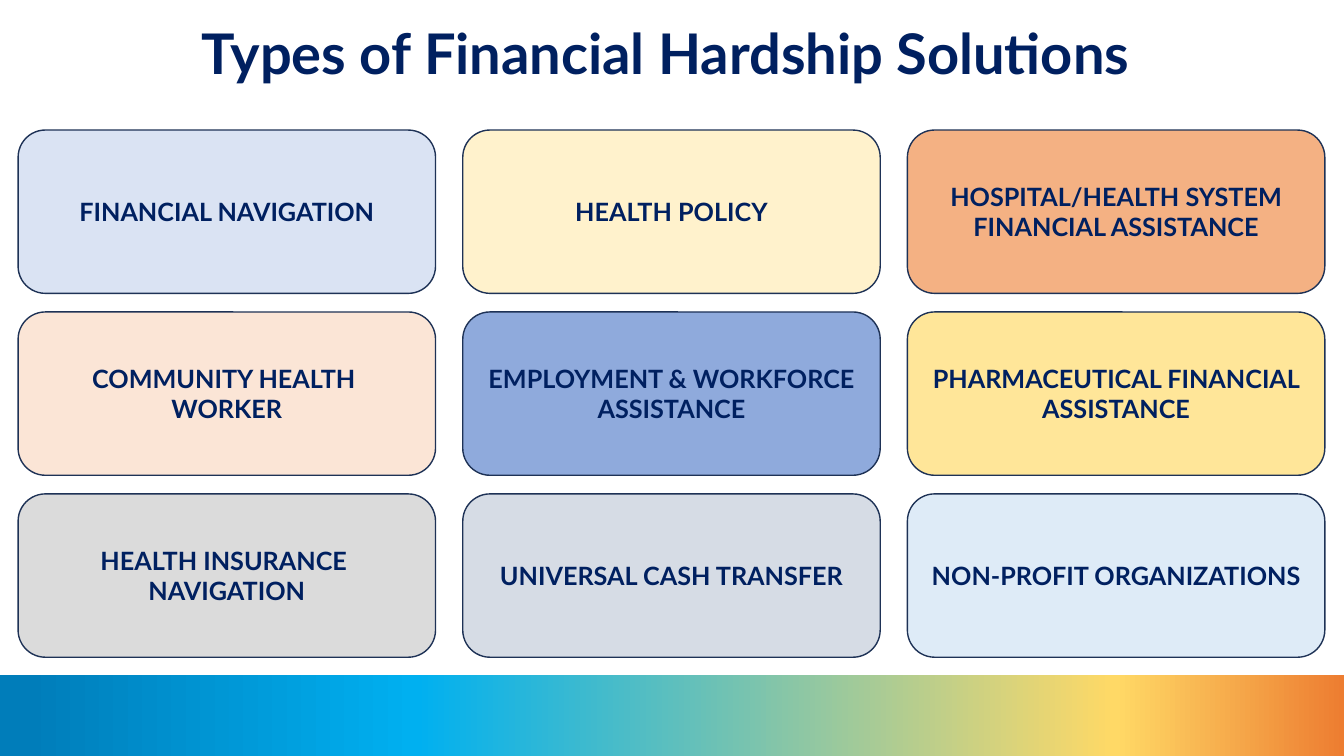
"""Build the slide on types of financial hardship solutions."""
from lxml import etree
from pptx import Presentation
from pptx.dml.color import RGBColor
from pptx.enum.shapes import MSO_SHAPE
from pptx.enum.text import MSO_ANCHOR, PP_ALIGN
from pptx.oxml.ns import qn
from pptx.util import Inches, Pt

RECT = MSO_SHAPE.RECTANGLE
ROUNDED = MSO_SHAPE.ROUNDED_RECTANGLE
MIDDLE = MSO_ANCHOR.MIDDLE
CENTER = PP_ALIGN.CENTER

COLORS = {
    "text": "002060", "outline": "1E3256",
    "pale_blue": "DAE3F3", "cream": "FFF2CC", "orange": "F4B183",
    "peach": "FBE5D6", "blue": "8FAADC", "yellow": "FFE699",
    "gray": "DBDBDB", "slate": "D6DCE5", "ice": "DEEBF7",
    "band_blue": "007DBA", "band_sky": "00B0F0",
    "band_yellow": "FFD966", "band_orange": "ED7D31",
}
BAND_STOPS = [(2, "band_blue"), (31, "band_sky"),
              (83, "band_yellow"), (100, "band_orange")]
SOLUTIONS = [
    [("pale_blue", ["FINANCIAL NAVIGATION"]),
     ("cream", ["HEALTH POLICY"]),
     ("orange", ["HOSPITAL/HEALTH SYSTEM FINANCIAL ASSISTANCE"])],
    [("peach", ["COMMUNITY HEALTH ", "WORKER"]),
     ("blue", ["EMPLOYMENT & WORKFORCE ASSISTANCE"]),
     ("yellow", ["PHARMACEUTICAL FINANCIAL ASSISTANCE"])],
    [("gray", ["HEALTH INSURANCE ", "NAVIGATION"]),
     ("slate", ["UNIVERSAL CASH TRANSFER"]),
     ("ice", ["NON-PROFIT ORGANIZATIONS"])],
]
LEFT, TOP, WIDTH, HEIGHT = 0.18, 1.29, 4.14, 1.62
COL_STEP, ROW_STEP = 4.41, 1.805


def rgb(name):
    return RGBColor.from_string(COLORS[name])


def write(sp, lines, size):
    tf = sp.text_frame
    tf.word_wrap = True
    tf.vertical_anchor = MIDDLE
    for i, line in enumerate(lines):
        p = tf.add_paragraph() if i else tf.paragraphs[0]
        p.alignment = CENTER
        r = p.add_run()
        r.text = line
        r.font.name = "Lato"
        r.font.size = Pt(size)
        r.font.bold = True
        r.font.color.rgb = rgb("text")


prs = Presentation()
prs.slide_width = Inches(13.33)
prs.slide_height = Inches(7.5)
s = prs.slides.add_slide(prs.slide_layouts[6])

band = s.shapes.add_shape(RECT, 0, Inches(6.7), Inches(13.33), Inches(0.8))
band.shadow.inherit = False
band.line.fill.background()
band.fill.gradient()
band.fill.gradient_angle = 0
stops = band.element.spPr.find(".//" + qn("a:gsLst"))
for stop in list(stops):
    stops.remove(stop)
for percent, name in BAND_STOPS:
    stop = etree.SubElement(stops, qn("a:gs"), pos=str(percent * 1000))
    etree.SubElement(stop, qn("a:srgbClr"), val=COLORS[name])

for row, cards in enumerate(SOLUTIONS):
    for col, (color, lines) in enumerate(cards):
        sp = s.shapes.add_shape(
            ROUNDED, Inches(LEFT + col * COL_STEP), Inches(TOP + row * ROW_STEP),
            Inches(WIDTH), Inches(HEIGHT))
        sp.shadow.inherit = False
        sp.fill.solid()
        sp.fill.fore_color.rgb = rgb(color)
        sp.line.color.rgb = rgb("outline")
        sp.line.width = Pt(1)
        write(sp, lines, 18)

title = s.shapes.add_textbox(Inches(0.37), Inches(0.01), Inches(12.6), Inches(1.01))
write(title, ["Types of Financial Hardship Solutions "], 40)
title.text_frame.paragraphs[0].space_after = Pt(6)

prs.save("out.pptx")
